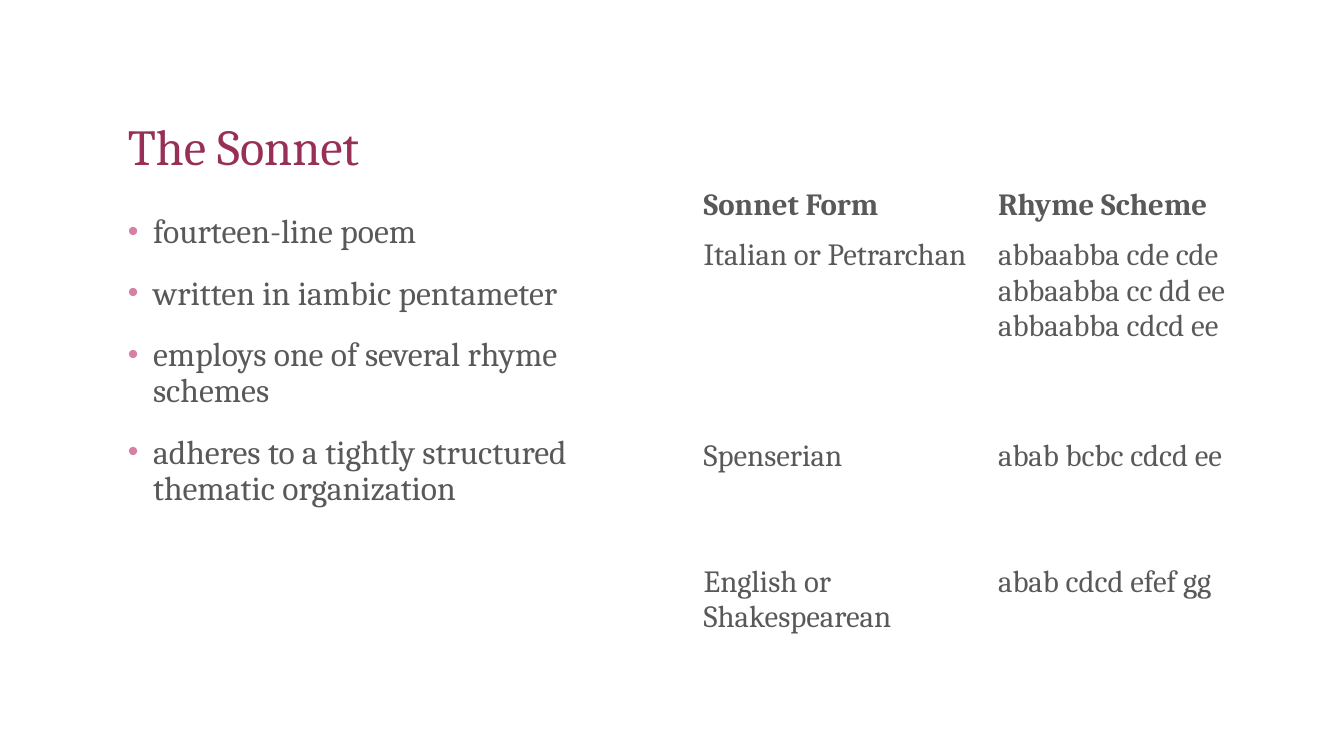
import pptx
import pptx.dml.color
import pptx.enum.text
import pptx.oxml
import pptx.oxml.ns
import pptx.util

PX = 9144  # EMU per px, 100 px to the inch
INK, TITLE, BULLET, PAPER = "595959", "972F57", "D680A5", "FFFFFF"

FEATURES = [
    "fourteen-line poem",
    "written in iambic pentameter",
    "employs one of several rhyme schemes",
    "adheres to a tightly structured thematic organization",
]
SONNET_FORMS = [
    ("Sonnet Form", "Rhyme Scheme"),
    ("Italian or Petrarchan", "abbaabba cde cde\nabbaabba cc dd ee\nabbaabba cdcd ee"),
    ("Spenserian", "abab bcbc cdcd ee"),
    ("English or Shakespearean", "abab cdcd efef gg"),
]


def color(hex_string):
    return pptx.dml.color.RGBColor.from_string(hex_string)


def px(length):
    return pptx.util.Emu(length * PX)


def assign(target, values):
    for name, value in values.items():
        setattr(target, name, value)


class SonnetSlide:
    font = "Cambria"

    def __init__(self, presentation):
        self.slide = presentation.slides.add_slide(presentation.slide_layouts[6])

    def set_words(self, paragraph, words, size, ink, bold=False):
        paragraph.text = words
        for run in paragraph.runs:
            assign(run.font, {"name": self.font, "size": pptx.util.Pt(size), "bold": bold})
            run.font.color.rgb = color(ink)

    def text_frame(self, left, top, width, height, anchor):
        box = self.slide.shapes.add_textbox(px(left), px(top), px(width), px(height))
        assign(box.text_frame, {"word_wrap": True, "vertical_anchor": anchor})
        return box.text_frame

    def title(self, words, *place):
        frame = self.text_frame(*place, pptx.enum.text.MSO_ANCHOR.BOTTOM)
        heading = frame.paragraphs[0]
        heading.line_spacing = 0.9
        self.set_words(heading, words, 36, TITLE)

    def add_bullet(self, paragraph, indent):
        properties = paragraph._p.get_or_add_pPr()
        for name, value in {"marL": px(indent), "indent": px(-indent)}.items():
            properties.set(name, str(value))
        namespace = pptx.oxml.ns.nsdecls("a")
        for element in (
            f'<a:buClr {namespace}><a:srgbClr val="{BULLET}"/></a:buClr>',
            f'<a:buSzPct {namespace} val="90000"/>',
            f'<a:buFont {namespace} typeface="Arial"/>',
            f'<a:buChar {namespace} char="•"/>',
        ):
            properties.append(pptx.oxml.parse_xml(element))

    def bullets(self, items, *place):
        frame = self.text_frame(*place, pptx.enum.text.MSO_ANCHOR.TOP)
        for index, item in enumerate(items):
            paragraph = frame.add_paragraph() if index else frame.paragraphs[0]
            self.add_bullet(paragraph, 25)
            paragraph.line_spacing = 0.9
            paragraph.space_before = pptx.util.Pt(18 if index else 0)
            self.set_words(paragraph, item, 24, INK)

    def table(self, rows, left, top, column_width, row_heights):
        columns = len(rows[0])
        table = self.slide.shapes.add_table(
            len(rows), columns, px(left), px(top),
            px(column_width * columns), px(sum(row_heights)),
        ).table
        assign(table, {"first_row": False, "horz_banding": False})
        for column in table.columns:
            column.width = px(column_width)
        margins = {"margin_left": px(12), "margin_right": px(12),
                   "margin_top": px(6), "margin_bottom": px(6)}
        for index, (row, height) in enumerate(zip(table.rows, row_heights)):
            row.height = px(height)
            for cell, words in zip(row.cells, rows[index]):
                assign(cell, margins)
                cell.fill.solid()
                cell.fill.fore_color.rgb = color(PAPER)
                self.set_words(cell.text_frame.paragraphs[0], words, 22, INK, bold=index == 0)


def main():
    presentation = pptx.Presentation()
    assign(presentation, {"slide_width": px(1333), "slide_height": px(750)})
    sonnet = SonnetSlide(presentation)
    sonnet.title("The Sonnet", 117, 50, 1100, 130)
    sonnet.bullets(FEATURES, 117, 208, 525, 467)
    sonnet.table(SONNET_FORMS, 686, 180, 292, [50, 199, 125, 87])
    presentation.save("out.pptx")


if __name__ == "__main__":
    main()
